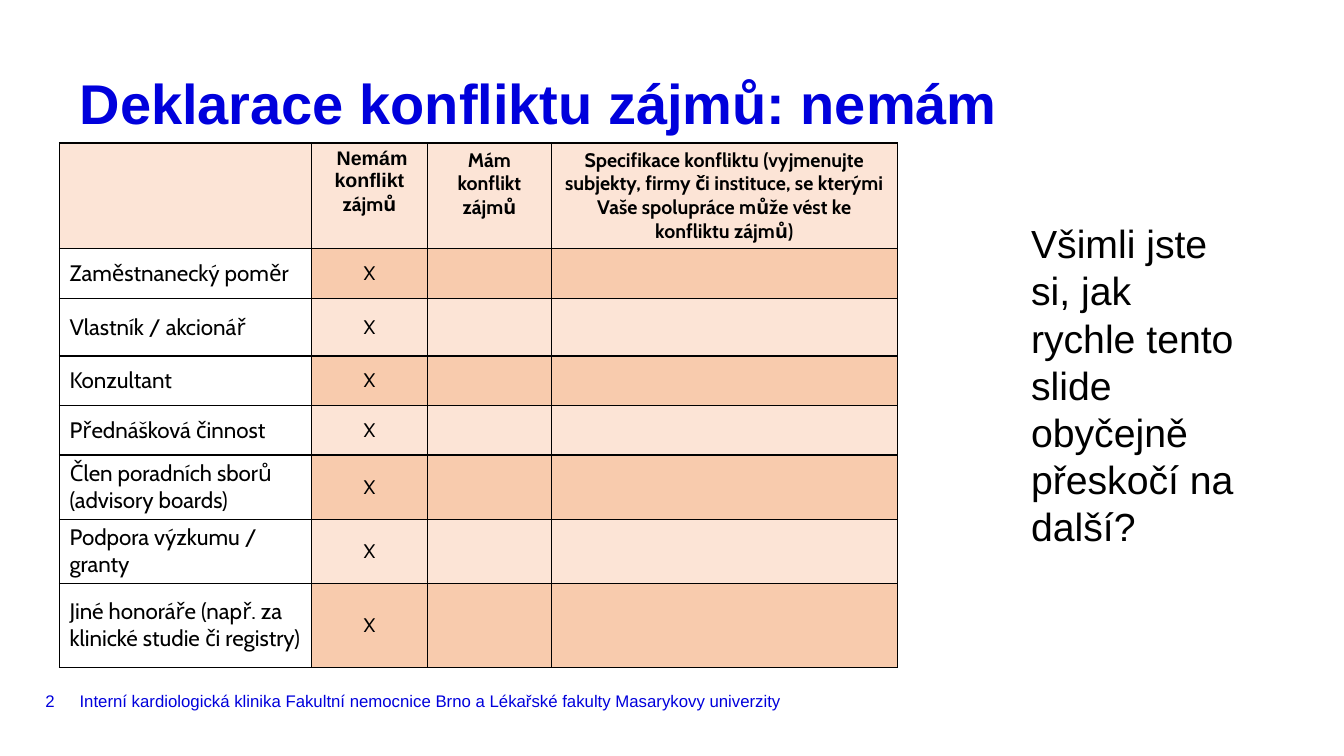
import pptx
import pptx.util
import pptx.dml.color
import pptx.enum.text
import pptx.oxml
import pptx.oxml.ns

Pt = pptx.util.Pt
Align = pptx.enum.text.PP_ALIGN
Anchor = pptx.enum.text.MSO_ANCHOR

HEADING = "Deklarace konfliktu zájmů: nemám"
QUESTION = "Všimli jste si, jak rychle tento slide obyčejně přeskočí na další?"
FOOTER = "Interní kardiologická klinika Fakultní nemocnice Brno a Lékařské fakulty Masarykovy univerzity"
PAGE = "2"
MARK = "X"
COLUMNS = [
    [(" Nemám konflikt", "Arial"), ("zájmů", "Cabin")],
    [("Mám konflikt zájmů", "Cabin")],
    [("Specifikace konfliktu (vyjmenujte subjekty, firmy či instituce, "
      "se kterými Vaše spolupráce může vést ke konfliktu zájmů)", "Cabin")],
]
RELATIONS = [
    ("Zaměstnanecký poměr", 35.5),
    ("Vlastník / akcionář", 41.3),
    ("Konzultant", 35.2),
    ("Přednášková činnost", 35.5),
    ("Člen poradních sborů (advisory boards)", 42),
    ("Podpora výzkumu / granty", 42),
    ("Jiné honoráře (např. za klinické studie či registry)", 60),
]
COLUMN_WIDTHS = [180, 82.8, 88.6, 247]
HEADER_HEIGHT = 68.4

THEME = {
    "blue": "0000DC", "black": "000000", "white": "FFFFFF",
    "light": "FCE4D6", "dark": "F8CBAD",
    "title": 40, "question": 28, "label": 16, "cell": 14, "footer": 12,
}


def rgb(name):
    return pptx.dml.color.RGBColor.from_string(THEME[name])


def write(paragraph, text, size, font="Arial", color="black", bold=False, align=Align.LEFT):
    paragraph.alignment = align
    run = paragraph.add_run()
    run.text = text
    run.font.size = Pt(THEME[size])
    run.font.name = font
    run.font.bold = bold
    run.font.color.rgb = rgb(color)


def add_text(slide, bounds, text, size, color="black", margin=0, wrap=True, anchor=Anchor.MIDDLE):
    frame = slide.shapes.add_textbox(*map(Pt, bounds)).text_frame
    frame.word_wrap = wrap
    frame.vertical_anchor = anchor
    if margin == 0:
        frame.margin_left = frame.margin_right = frame.margin_top = frame.margin_bottom = 0
    write(frame.paragraphs[0], text, size, color=color)


def format_cell(cell, fill):
    properties = cell._tc.get_or_add_tcPr()
    for side in ("lnL", "lnR", "lnT", "lnB"):
        properties.append(pptx.oxml.parse_xml(
            f'<a:{side} {pptx.oxml.ns.nsdecls("a")} w="{Pt(1)}"><a:solidFill>'
            f'<a:srgbClr val="{THEME["black"]}"/></a:solidFill></a:{side}>'))
    cell.fill.solid()
    cell.fill.fore_color.rgb = rgb(fill)


def add_declaration(slide):
    heights = [HEADER_HEIGHT] + [height for _, height in RELATIONS]
    table = slide.shapes.add_table(
        len(heights), len(COLUMN_WIDTHS), Pt(42.5), Pt(102.2),
        Pt(sum(COLUMN_WIDTHS)), Pt(sum(heights))).table
    table.first_row = table.horz_banding = False
    for column, width in zip(table.columns, COLUMN_WIDTHS):
        column.width = Pt(width)
    for row, height in zip(table.rows, heights):
        row.height = Pt(height)

    for r in range(len(heights)):
        for c in range(len(COLUMN_WIDTHS)):
            fill = "white" if r and c == 0 else "dark" if r % 2 else "light"
            format_cell(table.cell(r, c), fill)

    for c, lines in enumerate(COLUMNS, start=1):
        frame = table.cell(0, c).text_frame
        for i, (text, font) in enumerate(lines):
            paragraph = frame.add_paragraph() if i else frame.paragraphs[0]
            write(paragraph, text, "cell", font=font, bold=True, align=Align.CENTER)

    for r, (relation, _) in enumerate(RELATIONS, start=1):
        label, answer = table.cell(r, 0), table.cell(r, 1)
        label.vertical_anchor = answer.vertical_anchor = Anchor.MIDDLE
        write(label.text_frame.paragraphs[0], relation, "label", font="Cabin")
        write(answer.text_frame.paragraphs[0], MARK, "cell", font="Cabin", align=Align.CENTER)


def main():
    deck = pptx.Presentation()
    deck.slide_width, deck.slide_height = Pt(960), Pt(540)
    slide = deck.slides.add_slide(deck.slide_layouts[5])

    title = slide.shapes.title
    title.left, title.top, title.width, title.height = map(Pt, (56.9, 56.9, 846.7, 35.3))
    frame = title.text_frame
    frame.margin_left = frame.margin_right = frame.margin_top = frame.margin_bottom = 0
    frame.vertical_anchor = Anchor.TOP
    frame.auto_size = pptx.enum.text.MSO_AUTO_SIZE.NONE
    frame.paragraphs[0].line_spacing = Pt(40)
    write(frame.paragraphs[0], HEADING, "title", color="blue", bold=True)

    add_declaration(slide)
    add_text(slide, (729.4, 153.4, 159.1, 244.8), QUESTION, "question",
             margin=None, anchor=Anchor.TOP)
    add_text(slide, (56.9, 490.3, 623.5, 20.2), FOOTER, "footer", color="blue")
    add_text(slide, (32.4, 490.3, 20.2, 20.2), PAGE, "footer", color="blue", wrap=False)
    deck.save("out.pptx")


if __name__ == "__main__":
    main()
